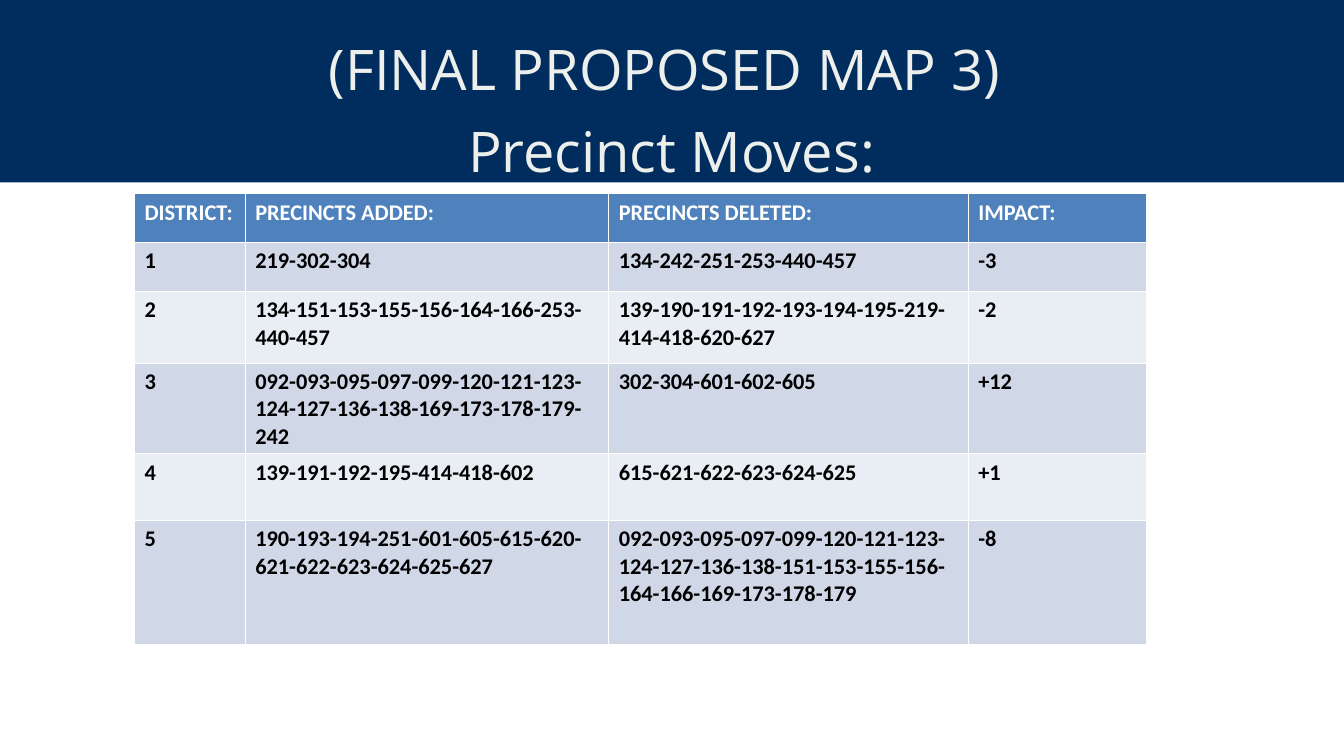
from pptx import Presentation
from pptx.dml.color import RGBColor
from pptx.enum import shapes, text
from pptx.util import Cm, Pt

NAVY = RGBColor(0x00, 0x2D, 0x5D)
CREAM = RGBColor(0xEC, 0xEF, 0xEB)
BLUE = RGBColor(0x4F, 0x81, 0xBD)
DARK = RGBColor(0xD0, 0xD8, 0xE8)
LIGHT = RGBColor(0xE9, 0xED, 0xF4)
WHITE = RGBColor(0xFF, 0xFF, 0xFF)
BLACK = RGBColor(0x00, 0x00, 0x00)


def write(para, words, font, size, color, bold=False, align=None, space=None):
    run = para.add_run()
    run.text = words
    run.font.name = font
    run.font.size = Pt(size)
    run.font.color.rgb = color
    run.font.bold = bold
    para.alignment = align
    para.line_spacing = space


deck = Presentation()
deck.slide_width, deck.slide_height = Cm(33.87), Cm(19.05)
slide = deck.slides.add_slide(deck.slide_layouts[6])

band = slide.shapes.add_shape(shapes.MSO_SHAPE.RECTANGLE, 0, 0, deck.slide_width, Cm(4.6))
band.shadow.inherit = False
band.fill.solid()
band.fill.fore_color.rgb = NAVY
band.line.fill.background()

title = slide.shapes.add_textbox(Cm(0.81), Cm(0.48), Cm(32.23), Cm(4.04))
frame = title.text_frame
frame.word_wrap = True
frame.auto_size = text.MSO_AUTO_SIZE.SHAPE_TO_FIT_TEXT
frame.margin_left = frame.margin_top = frame.margin_right = frame.margin_bottom = 0
for n, line in enumerate(["(FINAL PROPOSED MAP 3) ", "Precinct Moves:"]):
    para = frame.add_paragraph() if n else frame.paragraphs[0]
    write(para, line, "Open Sans", 40, CREAM,
          align=text.PP_ALIGN.CENTER, space=Pt(58.7))

moves = [
    ("DISTRICT:", "PRECINCTS ADDED:", "PRECINCTS DELETED:", "IMPACT:"),
    ("1", "219-302-304", "134-242-251-253-440-457", "-3"),
    ("2", "134-151-153-155-156-164-166-253-440-457",
     "139-190-191-192-193-194-195-219-414-418-620-627", "-2"),
    ("3", "092-093-095-097-099-120-121-123-124-127-136-138-169-173-178-179-242",
     "302-304-601-602-605", "+12"),
    ("4", "139-191-192-195-414-418-602", "615-621-622-623-624-625", "+1"),
    ("5", "190-193-194-251-601-605-615-620-621-622-623-624-625-627",
     "092-093-095-097-099-120-121-123-124-127-136-138-151-153-155-156-"
     "164-166-169-173-178-179", "-8"),
]
widths = [2.79, 9.16, 9.06, 4.5]
heights = [1.23, 1.23, 1.81, 1.7, 1.68, 3.12]

table = slide.shapes.add_table(len(moves), len(widths), Cm(3.39), Cm(4.88),
                               Cm(sum(widths)), Cm(sum(heights))).table
for col, width in zip(table.columns, widths):
    col.width = Cm(width)
for row, height in zip(table.rows, heights):
    row.height = Cm(height)

for r, move in enumerate(moves):
    fill = BLUE if r == 0 else DARK if r % 2 else LIGHT
    for c, words in enumerate(move):
        cell = table.cell(r, c)
        cell.fill.solid()
        cell.fill.fore_color.rgb = fill
        write(cell.text_frame.paragraphs[0], words, "Calibri", 16,
              BLACK if r else WHITE, bold=True)

deck.save("out.pptx")
